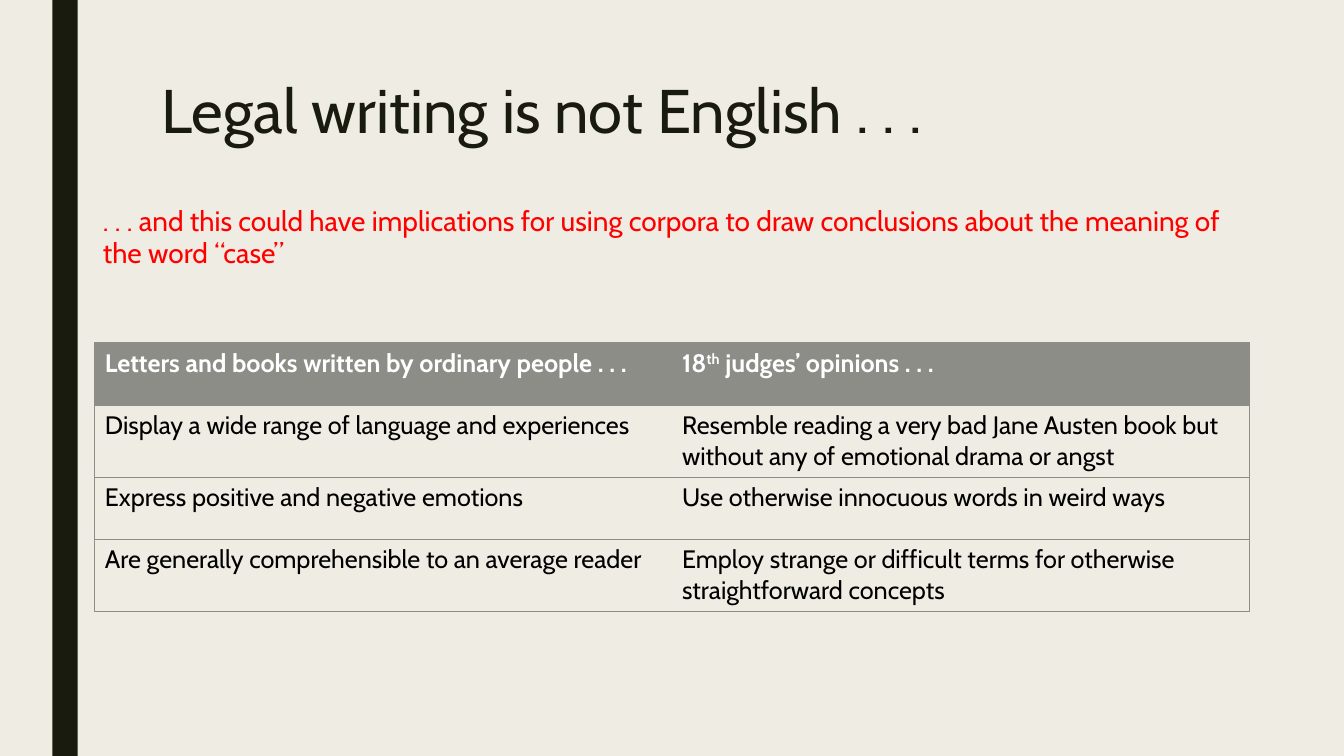
"""Build a slide comparing ordinary writing with judges' opinions."""
import dataclasses

import pptx
import pptx.dml.color
import pptx.enum.shapes
import pptx.enum.text
import pptx.oxml.ns
import pptx.util
from lxml import etree
from pptx.util import Inches


@dataclasses.dataclass(frozen=True)
class Theme:
    font: str = "Cabin"
    paper: str = "EFEDE3"
    ink: str = "191B0E"
    accent: str = "FF0000"
    grey: str = "8C8D86"
    white: str = "FFFFFF"
    black: str = "000000"
    title_size: int = 44
    body_size: int = 20
    table_size: int = 18
    rule: float = 0.5


THEME = Theme()

ROWS = [
    (["Letters and books written by ordinary people . . ."],
     ["18", "^th", " judges’ opinions . . ."]),
    (["Display a wide range of language and experiences"],
     ["Resemble reading a very bad Jane Austen book but without any of emotional drama or angst"]),
    (["Express positive and negative emotions"],
     ["Use otherwise innocuous words in weird ways"]),
    (["Are generally comprehensible to an average reader"],
     ["Employ strange or difficult terms for otherwise straightforward concepts"]),
]


def rgb(color):
    return pptx.dml.color.RGBColor.from_string(color)


def add_run(p, text, size, color, bold=False):
    r = p.add_run()
    r.text = text.removeprefix("^")
    r.font.name = THEME.font
    r.font.size = pptx.util.Pt(size)
    r.font.color.rgb = rgb(color)
    r.font.bold = bold
    if text.startswith("^"):
        r._r.get_or_add_rPr().set("baseline", "30000")


def fill_placeholder(sp, box, text, size, color, spacing):
    sp.left, sp.top, sp.width, sp.height = map(Inches, box)
    tf = sp.text_frame
    tf.word_wrap = True
    tf.auto_size = pptx.enum.text.MSO_AUTO_SIZE.NONE
    tf.vertical_anchor = pptx.enum.text.MSO_ANCHOR.TOP
    p = tf.paragraphs[0]
    p.alignment = pptx.enum.text.PP_ALIGN.LEFT
    p.line_spacing = spacing
    add_run(p, text, size, color)
    return p


def remove_bullet(p):
    pPr = p._p.get_or_add_pPr()
    pPr.set("marL", "0")
    pPr.set("indent", "0")
    etree.SubElement(pPr, pptx.oxml.ns.qn("a:buNone"))


def add_side_bar(s):
    sp = s.shapes.add_shape(pptx.enum.shapes.MSO_SHAPE.RECTANGLE,
                            Inches(0.52), Inches(0), Inches(0.25), Inches(7.5))
    sp.shadow.inherit = False
    sp.fill.solid()
    sp.fill.fore_color.rgb = rgb(THEME.ink)
    sp.line.fill.background()


def set_borders(cell, visible):
    qn = pptx.oxml.ns.qn
    tcPr = cell._tc.get_or_add_tcPr()
    for side in "LRTB":
        ln = etree.SubElement(tcPr, qn(f"a:ln{side}"), w=str(pptx.util.Pt(THEME.rule)))
        if side in visible:
            fill = etree.SubElement(ln, qn("a:solidFill"))
            etree.SubElement(fill, qn("a:srgbClr"), val=THEME.grey)
        else:
            etree.SubElement(ln, qn("a:noFill"))


def fill_cell(cell, texts, header, outer_side):
    set_borders(cell, outer_side + "TB")
    if header:
        cell.fill.solid()
        cell.fill.fore_color.rgb = rgb(THEME.grey)
    else:
        cell.fill.background()
    p = cell.text_frame.paragraphs[0]
    for text in texts:
        add_run(p, text, THEME.table_size, THEME.white if header else THEME.black, header)


def add_comparison(s):
    row_height = 0.62
    table = s.shapes.add_table(len(ROWS), 2, Inches(0.94), Inches(3.4), Inches(11.45),
                               Inches(row_height * len(ROWS))).table
    table.horz_banding = False
    for i, row in enumerate(ROWS):
        table.rows[i].height = Inches(row_height)
        for j, texts in enumerate(row):
            fill_cell(table.cell(i, j), texts, i == 0, "LR"[j])


def main():
    prs = pptx.Presentation()
    prs.slide_width, prs.slide_height = Inches(13.33), Inches(7.5)
    s = prs.slides.add_slide(prs.slide_layouts[1])
    s.background.fill.solid()
    s.background.fill.fore_color.rgb = rgb(THEME.paper)
    add_side_bar(s)
    fill_placeholder(s.shapes.title, (1.5, 0.75, 10.5, 1.62),
                     "Legal writing is not English . . .",
                     THEME.title_size, THEME.ink, 0.89)
    p = fill_placeholder(s.placeholders[1], (0.92, 2, 11.5, 1.02),
                         ". . . and this could have implications for using corpora to draw "
                         "conclusions about the meaning of the word “case”",
                         THEME.body_size, THEME.accent, 0.94)
    p.space_before, p.space_after = pptx.util.Pt(10), pptx.util.Pt(2)
    remove_bullet(p)
    add_comparison(s)
    prs.save("out.pptx")


if __name__ == "__main__":
    main()
